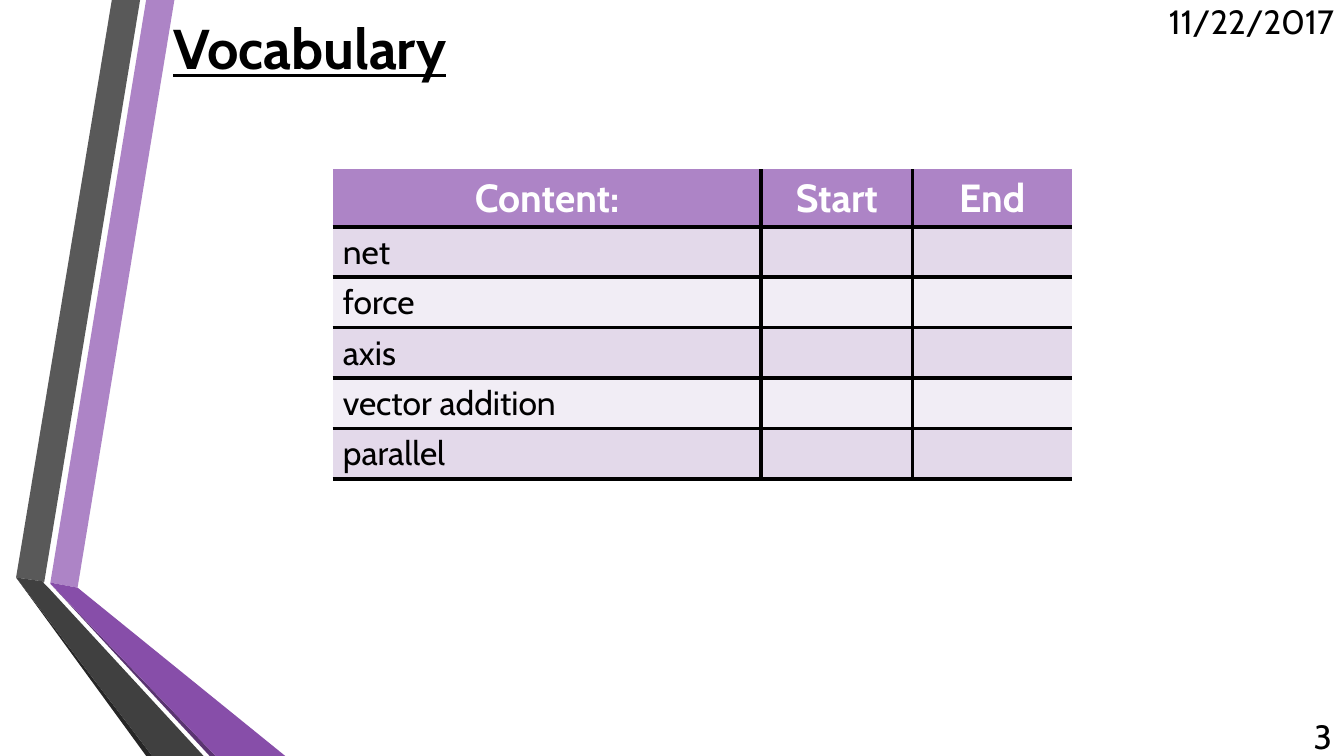
from dataclasses import dataclass

from lxml.etree import SubElement
from pptx import Presentation
from pptx.dml.color import RGBColor
from pptx.enum.text import MSO_ANCHOR, MSO_AUTO_SIZE, PP_ALIGN
from pptx.oxml.ns import qn
from pptx.util import Pt

PX = 9144
FONT = "Cabin"
BLACK = "000000"
WHITE = "FFFFFF"
PURPLE = "AD84C6"
BANDS = ("E3D9EA", "F1EDF5")


@dataclass
class Ribbon:
    color: str
    points: list[tuple[int, int]]


@dataclass
class Label:
    text: str
    box: tuple[int, int, int, int]


RIBBONS = [
    Ribbon(PURPLE, [(50, 578), (77, 583), (173, 0), (145, 0)]),
    Ribbon("595959", [(139, 0), (111, 0), (16, 573), (44, 577)]),
    Ribbon("262626", [(16, 573), (145, 750), (151, 750)]),
    Ribbon("5A3471", [(50, 579), (208, 750), (214, 750)]),
    Ribbon("874EA9", [(50, 579), (214, 750), (283, 750), (77, 583), (50, 578)]),
    Ribbon("404040", [(202, 750), (48, 583), (43, 578), (44, 577), (16, 573), (151, 750)]),
]
LABELS = [
    Label("11/22/2017", (1129, 1, 204, 40)),
    Label("3", (1258, 710, 73, 40)),
]
HEADERS = ["Content:", "Start", "End"]
WORDS = ["net", "force", "axis", "vector addition", "parallel"]
COL_WIDTHS = [425, 150, 158]
HEADER_HEIGHT = 57
ROW_HEIGHT = 50


def rgb(color: str) -> RGBColor:
    return RGBColor.from_string(color)


def format_text(p, size: int, color: str = BLACK, bold: bool = False,
                align=PP_ALIGN.LEFT) -> None:
    p.alignment = align
    p.font.name = FONT
    p.font.size = Pt(size)
    p.font.bold = bold
    p.font.color.rgb = rgb(color)


def add_ribbon(s, ribbon: Ribbon) -> None:
    start, *rest = ribbon.points
    builder = s.shapes.build_freeform(*start, scale=PX)
    builder.add_line_segments(rest, close=True)
    sp = builder.convert_to_shape()
    sp.shadow.inherit = False
    sp.fill.solid()
    sp.fill.fore_color.rgb = rgb(ribbon.color)
    sp.line.fill.background()


def set_title(s, text: str) -> None:
    sp = s.shapes.title
    sp.left, sp.top, sp.width, sp.height = (v * PX for v in (162, 1, 1096, 92))
    tf = sp.text_frame
    tf.text = text
    tf.auto_size = MSO_AUTO_SIZE.NONE
    tf.vertical_anchor = MSO_ANCHOR.MIDDLE
    p = tf.paragraphs[0]
    format_text(p, 40, bold=True)
    p.font.underline = True


def add_label(s, label: Label) -> None:
    tf = s.shapes.add_textbox(*(v * PX for v in label.box)).text_frame
    tf.text = label.text
    tf.word_wrap = True
    tf.vertical_anchor = MSO_ANCHOR.MIDDLE
    format_text(tf.paragraphs[0], 24, align=PP_ALIGN.RIGHT)


def set_borders(cell, edges: dict[str, bool]) -> None:
    tc_pr = cell._tc.get_or_add_tcPr()
    for side, visible in edges.items():
        ln = SubElement(tc_pr, qn(f"a:ln{side}"), w=str(Pt(3)))
        if visible:
            fill = SubElement(ln, qn("a:solidFill"))
            SubElement(fill, qn("a:srgbClr"), val=BLACK)
        else:
            SubElement(ln, qn("a:noFill"))


def add_vocabulary(s) -> None:
    rows = [HEADERS] + [[word, "", ""] for word in WORDS]
    heights = [HEADER_HEIGHT] + [ROW_HEIGHT] * len(WORDS)
    frame = s.shapes.add_table(len(rows), len(HEADERS), 330 * PX, 168 * PX,
                               sum(COL_WIDTHS) * PX, sum(heights) * PX)
    table = frame.table
    for column, width in zip(table.columns, COL_WIDTHS):
        column.width = width * PX
    for row, height in zip(table.rows, heights):
        row.height = height * PX
    for i, texts in enumerate(rows):
        header = i == 0
        for j, text in enumerate(texts):
            cell = table.cell(i, j)
            set_borders(cell, {"L": j > 0, "R": j < len(HEADERS) - 1,
                               "T": not header, "B": True})
            cell.fill.solid()
            cell.fill.fore_color.rgb = rgb(PURPLE if header else BANDS[(i - 1) % 2])
            cell.text = text
            p = cell.text_frame.paragraphs[0]
            if header:
                cell.vertical_anchor = MSO_ANCHOR.MIDDLE
                format_text(p, 28, WHITE, True, PP_ALIGN.CENTER)
            else:
                format_text(p, 24)


def main() -> None:
    prs = Presentation()
    prs.slide_width, prs.slide_height = 1333 * PX, 750 * PX
    s = prs.slides.add_slide(prs.slide_layouts[5])
    for ribbon in RIBBONS:
        add_ribbon(s, ribbon)
    set_title(s, "Vocabulary")
    for label in LABELS:
        add_label(s, label)
    add_vocabulary(s)
    prs.save("out.pptx")


if __name__ == "__main__":
    main()
